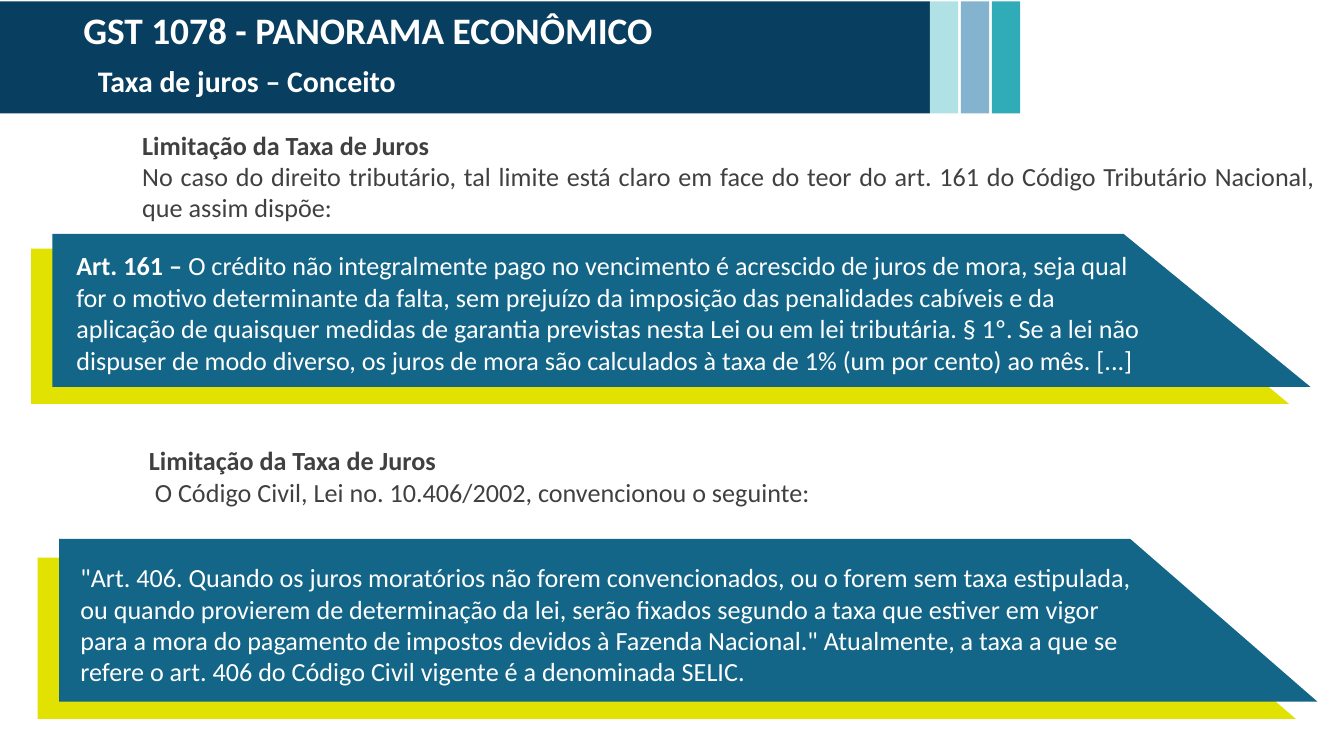
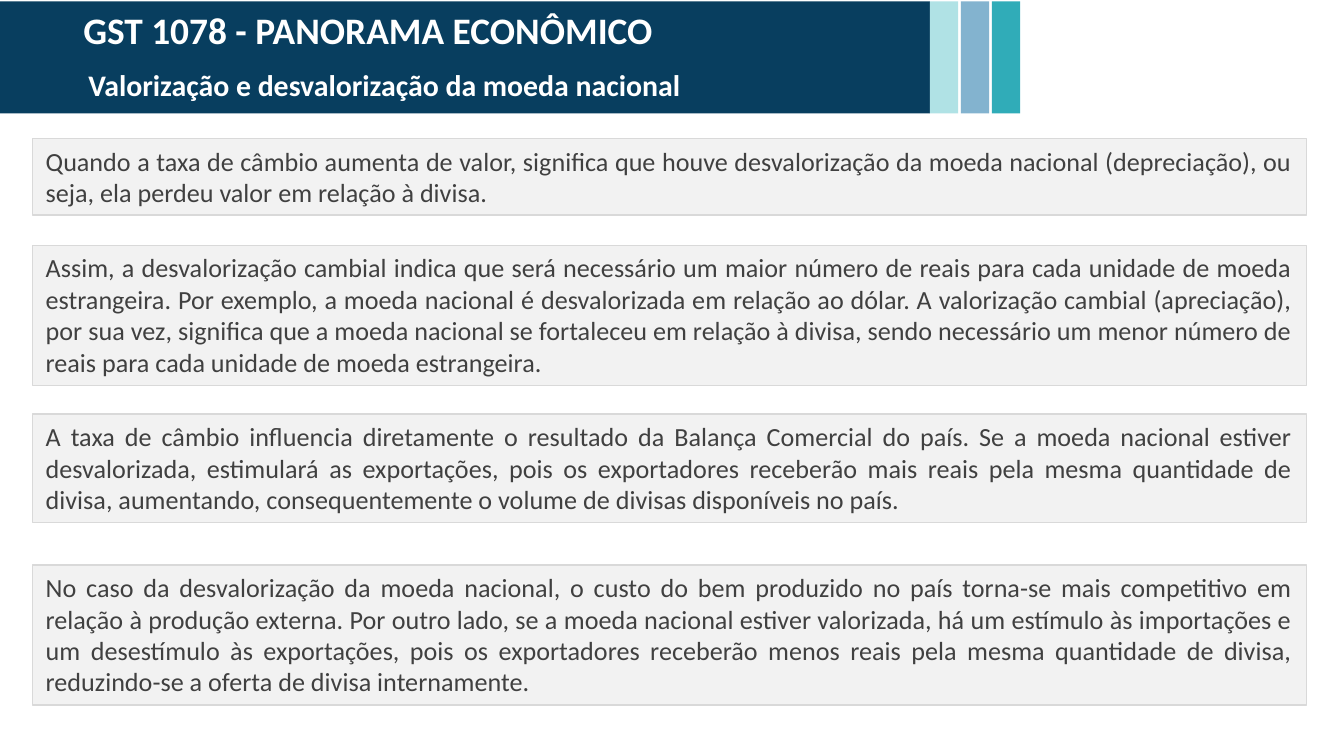
"""Builds two slides on interest-rate limits and currency appreciation."""
import dataclasses

import pptx
import pptx.dml.color
import pptx.enum.shapes
import pptx.enum.text
import pptx.util

Pt = pptx.util.Pt
ALIGN = pptx.enum.text.PP_ALIGN
FIT = pptx.enum.text.MSO_AUTO_SIZE


@dataclasses.dataclass(frozen=True)
class Theme:
    font: str = "Calibri"
    title_size: int = 20
    subtitle_size: int = 16
    body_size: int = 14
    banner: str = "083E5F"
    stripes: tuple = ("B0E2E5", "83B3CF", "30ACB8")
    ribbon: str = "136687"
    ribbon_back: str = "E1E202"
    panel: str = "F2F2F2"
    panel_line: str = "D9D9D9"
    ink: str = "404040"
    light: str = "FFFFFF"


THEME = Theme()
COURSE = "GST 1078 - PANORAMA ECONÔMICO"
LIMIT_HEADING = "Limitação da Taxa de Juros"

RATE_SUBTITLE = ("Taxa de juros – Conceito", (45.4, 30.2, 176.4, 26.6))
LIMITS = [
    {
        "lead": "No caso do direito tributário, tal limite está claro em face do teor do art. 161 "
                "do Código Tributário Nacional, que assim dispõe:",
        "lead_align": ALIGN.JUSTIFY,
        "lead_at": (69.1, 65.5, 643, 58.2),
        "back": (16.6, 133.2, 83.2),
        "front": (28.1, 125.3, 82),
        "quote": [
            ("Art. 161 – ", True),
            ("O crédito não integralmente pago no vencimento é acrescido de juros de mora, seja qual "
             "for o motivo determinante da falta, sem prejuízo da imposição das penalidades cabíveis e da "
             "aplicação de quaisquer medidas de garantia previstas nesta Lei ou em lei tributária. § 1º. "
             "Se a lei não dispuser de modo diverso, os juros de mora são calculados à taxa de 1% "
             "(um por cento) ao mês. [...]", False),
        ],
        "quote_at": (33.8, 130.3, 591.8, 77),
    },
    {
        "lead": " O Código Civil, Lei no. 10.406/2002, convencionou o seguinte:",
        "lead_align": ALIGN.LEFT,
        "lead_at": (72.7, 234.7, 600.5, 41),
        "back": (20.2, 298.8, 86.4),
        "front": (31.7, 288.7, 87.1),
        "quote": [
            ("\"Art. 406. Quando os juros moratórios não forem convencionados, ou o forem sem taxa "
             "estipulada, ou quando provierem de determinação da lei, serão fixados segundo a taxa que "
             "estiver em vigor para a mora do pagamento de impostos devidos à Fazenda Nacional.\" "
             "Atualmente, a taxa a que se refere o art. 406 do Código Civil vigente é a denominada SELIC.",
             False),
        ],
        "quote_at": (36, 297.4, 585.4, 76.3),
    },
]

CURRENCY_SUBTITLE = ("Valorização e desvalorização da moeda nacional", (40.3, 32.4, 335.5, 26.6))
PANELS = [
    (74.2, 2, "Quando a taxa de câmbio aumenta de valor, significa que houve desvalorização da moeda "
              "nacional (depreciação), ou seja, ela perdeu valor em relação à divisa."),
    (131.4, 4, "Assim, a desvalorização cambial indica que será necessário um maior número de reais para "
               "cada unidade de moeda estrangeira. Por exemplo, a moeda nacional é desvalorizada em relação "
               "ao dólar. A valorização cambial (apreciação), por sua vez, significa que a moeda nacional "
               "se fortaleceu em relação à divisa, sendo necessário um menor número de reais para cada "
               "unidade de moeda estrangeira."),
    (221.8, 3, "A taxa de câmbio influencia diretamente o resultado da Balança Comercial do país. Se a moeda "
               "nacional estiver desvalorizada, estimulará as exportações, pois os exportadores receberão "
               "mais reais pela mesma quantidade de divisa, aumentando, consequentemente o volume de "
               "divisas disponíveis no país."),
    (302.7, 4, "No caso da desvalorização da moeda nacional, o custo do bem produzido no país torna-se mais "
               "competitivo em relação à produção externa. Por outro lado, se a moeda nacional estiver "
               "valorizada, há um estímulo às importações e um desestímulo às exportações, pois os "
               "exportadores receberão menos reais pela mesma quantidade de divisa, reduzindo-se a oferta "
               "de divisa internamente."),
]
PANEL_LEFT, PANEL_WIDTH, PANEL_PADDING, LINE_HEIGHT = 17.4, 682.4, 7.2, 16.95

TITLE_AT = (0.7, 0, 393.1, 31.5)
BANNER_AT = (-1.5, 0.7, 499.7, 60)
STRIPE_WIDTH, STRIPE_PITCH = 15.1, 16.6
RIBBON_TOP_WIDTH, RIBBON_WIDTH = 573.8, 674


def color(code):
    return pptx.dml.color.RGBColor.from_string(code)


def points(lengths):
    return [Pt(length) for length in lengths]


def paint(shape, fill, line=None):
    shape.shadow.inherit = False
    shape.fill.solid()
    shape.fill.fore_color.rgb = color(fill)
    if line:
        shape.line.color.rgb = color(line)
        shape.line.width = Pt(0.75)
    else:
        shape.line.fill.background()


def add_rectangle(shapes, place, fill, line=None):
    box = shapes.add_shape(pptx.enum.shapes.MSO_SHAPE.RECTANGLE, *points(place))
    paint(box, fill, line)
    return box


def write(box, paras, size, ink, wrap=True, fit=FIT.SHAPE_TO_FIT_TEXT):
    frame = box.text_frame
    frame.word_wrap = wrap
    frame.auto_size = fit
    frame.vertical_anchor = pptx.enum.text.MSO_ANCHOR.TOP
    for index, (align, runs) in enumerate(paras):
        para = frame.add_paragraph() if index else frame.paragraphs[0]
        para.alignment = align
        for text, bold in runs:
            span = para.add_run()
            span.text = text
            span.font.name = THEME.font
            span.font.size = Pt(size)
            span.font.bold = bold
            span.font.color.rgb = color(ink)


def add_text(shapes, place, paras, size, ink, **options):
    write(shapes.add_textbox(*points(place)), paras, size, ink, **options)


def add_ribbon(shapes, place, fill):
    left, top, height = place
    corners = [(RIBBON_TOP_WIDTH, 0), (RIBBON_WIDTH, height), (0, height)]
    builder = shapes.build_freeform(Pt(left), Pt(top))
    builder.add_line_segments([(Pt(left + x), Pt(top + y)) for x, y in corners], close=True)
    paint(builder.convert_to_shape(), fill)


def move_bands_to_layout(page):
    left, top, width, height = BANNER_AT
    bands = [add_rectangle(page.shapes, BANNER_AT, THEME.banner)]
    for index, fill in enumerate(THEME.stripes):
        place = (left + width + index * STRIPE_PITCH, top, STRIPE_WIDTH, height)
        bands.append(add_rectangle(page.shapes, place, fill))
    for number, band in enumerate(bands, start=101):
        band.element.nvSpPr.cNvPr.id = number
        page.slide_layout.shapes.element.append(band.element)


def add_page(deck, subtitle):
    page = deck.slides.add_slide(deck.slide_layouts[5])
    title = page.shapes.title
    title.left, title.top, title.width, title.height = points(TITLE_AT)
    write(title, [(ALIGN.CENTER, [(COURSE, True)])], THEME.title_size, THEME.light, fit=FIT.NONE)
    text, place = subtitle
    add_text(page.shapes, place, [(ALIGN.LEFT, [(text, True)])],
             THEME.subtitle_size, THEME.light, wrap=False)
    return page


def add_limit(page, limit):
    lead = [(ALIGN.LEFT, [(LIMIT_HEADING, True)]), (limit["lead_align"], [(limit["lead"], False)])]
    add_text(page.shapes, limit["lead_at"], lead, THEME.body_size, THEME.ink)
    group = page.shapes.add_group_shape()
    add_ribbon(group.shapes, limit["back"], THEME.ribbon_back)
    add_ribbon(group.shapes, limit["front"], THEME.ribbon)
    add_text(group.shapes, limit["quote_at"], [(ALIGN.LEFT, limit["quote"])],
             THEME.body_size, THEME.light, fit=FIT.NONE)


def add_panel(page, top, lines, text):
    place = (PANEL_LEFT, top, PANEL_WIDTH, PANEL_PADDING + lines * LINE_HEIGHT)
    box = add_rectangle(page.shapes, place, THEME.panel, THEME.panel_line)
    write(box, [(ALIGN.JUSTIFY, [(text, False)])], THEME.body_size, THEME.ink)


def main():
    deck = pptx.Presentation()
    deck.slide_width, deck.slide_height = Pt(720), Pt(405)

    rate_page = add_page(deck, RATE_SUBTITLE)
    move_bands_to_layout(rate_page)
    for limit in LIMITS:
        add_limit(rate_page, limit)

    currency_page = add_page(deck, CURRENCY_SUBTITLE)
    for top, lines, text in PANELS:
        add_panel(currency_page, top, lines, text)

    deck.save("out.pptx")


if __name__ == "__main__":
    main()
